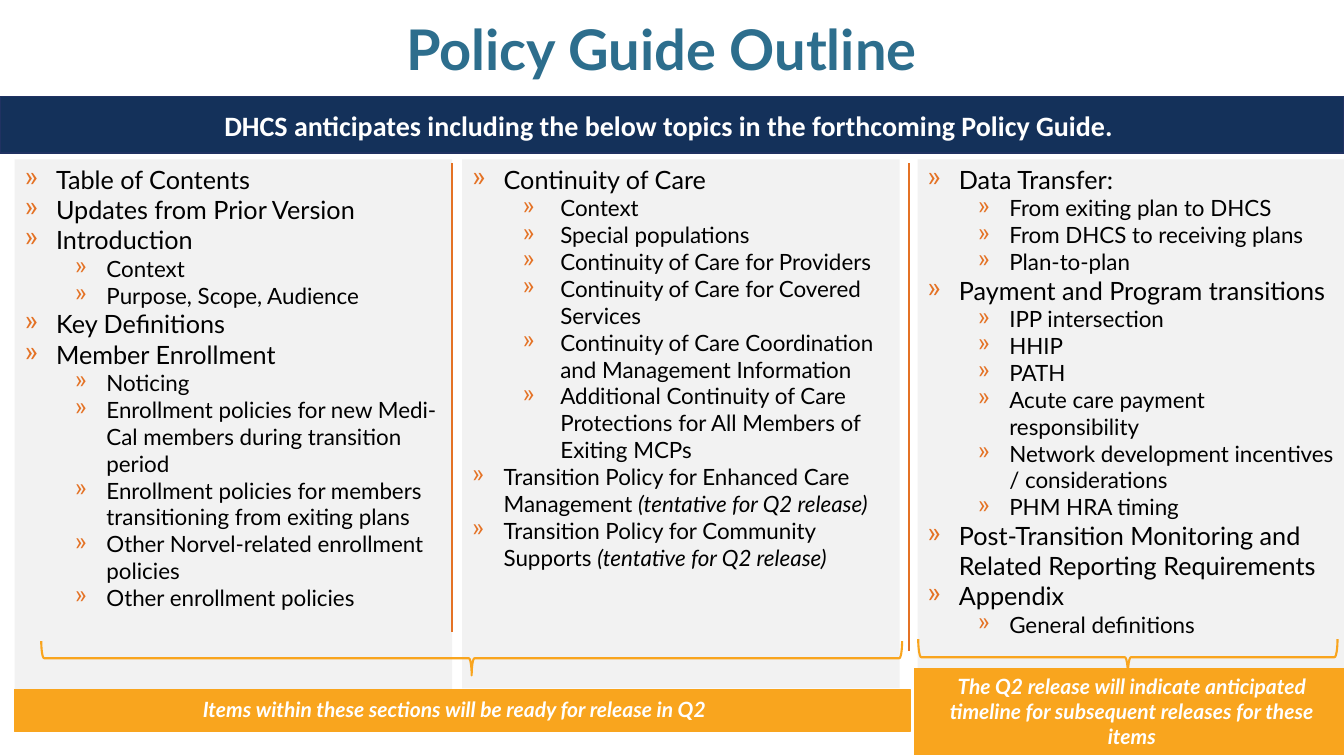
import pptx
import pptx.util
import pptx.dml.color
import pptx.enum.shapes
import pptx.enum.text
import pptx.oxml.ns
import lxml.etree

Pt = pptx.util.Pt
SHAPE = pptx.enum.shapes.MSO_SHAPE
ANCHOR = pptx.enum.text.MSO_ANCHOR
ALIGN = pptx.enum.text.PP_ALIGN

ORANGE = "E47225"
AMBER = "F9A51E"
WHITE = "FFFFFF"
Q2_NOTE = "(tentative for Q2 release)"
TOP_INDENT = 22.5

ENROLLMENT_TOPICS = [
    (0, "Table of Contents"),
    (0, "Updates from Prior Version"),
    (0, "Introduction"),
    (1, "Context"),
    (1, "Purpose, Scope, Audience"),
    (0, "Key Definitions"),
    (0, "Member Enrollment"),
    (1, "Noticing"),
    (1, "Enrollment policies for new Medi-Cal members during transition period"),
    (1, "Enrollment policies for members transitioning from exiting plans"),
    (1, "Other Norvel-related enrollment policies"),
    (1, "Other enrollment policies"),
]
CARE_TOPICS = [
    (0, "Continuity of Care"),
    (1, "Context"),
    (1, "Special populations"),
    (1, "Continuity of Care for Providers"),
    (1, "Continuity of Care for Covered Services"),
    (1, "Continuity of Care Coordination and Management Information"),
    (1, "Additional Continuity of Care Protections for All Members of Exiting MCPs"),
    (0, "Transition Policy for Enhanced Care Management ", Q2_NOTE),
    (0, "Transition Policy for Community Supports ", Q2_NOTE),
]
DATA_TOPICS = [
    (0, "Data Transfer:"),
    (1, "From exiting plan to DHCS"),
    (1, "From DHCS to receiving plans"),
    (1, "Plan-to-plan"),
    (0, "Payment and Program transitions"),
    (1, "IPP intersection"),
    (1, "HHIP"),
    (1, "PATH"),
    (1, "Acute care payment responsibility"),
    (1, "Network development incentives / considerations"),
    (1, "PHM HRA timing"),
    (0, "Post-Transition Monitoring and Related Reporting Requirements"),
    (0, "Appendix"),
    (1, "General definitions"),
]


def rgb(color):
    return pptx.dml.color.RGBColor.from_string(color)


def add_run(p, text, size, color, font="Lato", bold=False, italic=False):
    r = p.add_run()
    r.text = text
    r.font.name = font
    r.font.size = Pt(size)
    r.font.bold = bold
    r.font.italic = italic
    r.font.color.rgb = rgb(color)


def add_shape(s, kind, box, fill=None, line=None, width=1):
    sp = s.shapes.add_shape(kind, *map(Pt, box))
    sp.shadow.inherit = False
    if fill:
        sp.fill.solid()
        sp.fill.fore_color.rgb = rgb(fill)
    else:
        sp.fill.background()
    if line:
        sp.line.color.rgb = rgb(line)
        sp.line.width = Pt(width)
    else:
        sp.line.fill.background()
    return sp


def add_centered_text(sp, text, size, color, anchor, font="Lato", italic=False):
    tf = sp.text_frame
    tf.word_wrap = True
    tf.auto_size = pptx.enum.text.MSO_AUTO_SIZE.NONE
    tf.vertical_anchor = anchor
    p = tf.paragraphs[0]
    p.alignment = ALIGN.CENTER
    add_run(p, text, size, color, font, True, italic)
    return p


def set_bullet(p, left, hanging):
    qn = pptx.oxml.ns.qn
    pPr = p._p.get_or_add_pPr()
    pPr.set("marL", str(Pt(left)))
    pPr.set("indent", str(-Pt(hanging)))
    bu_color = lxml.etree.SubElement(pPr, qn("a:buClr"))
    lxml.etree.SubElement(bu_color, qn("a:srgbClr")).set("val", ORANGE)
    lxml.etree.SubElement(pPr, qn("a:buChar")).set("char", "»")


def add_topics(s, box, topics, sub_hanging=TOP_INDENT):
    sp = add_shape(s, SHAPE.RECTANGLE, box, "F2F2F2")
    tf = sp.text_frame
    tf.word_wrap = True
    tf.vertical_anchor = ANCHOR.TOP
    for i, (level, text, *notes) in enumerate(topics):
        p = tf.add_paragraph() if i else tf.paragraphs[0]
        p.level = level
        p.alignment = ALIGN.LEFT
        hanging = sub_hanging if level else TOP_INDENT
        set_bullet(p, 36 * level + hanging, hanging)
        size = 16 if level or notes else 18
        add_run(p, text, size, "000000")
        for note in notes:
            add_run(p, note, size, "000000", italic=True)


def add_divider(s, x, top, bottom):
    line = s.shapes.add_connector(
        pptx.enum.shapes.MSO_CONNECTOR.STRAIGHT, Pt(x), Pt(top), Pt(x), Pt(bottom))
    line.line.color.rgb = rgb(ORANGE)
    line.line.width = Pt(1.5)
    lxml.etree.SubElement(line._element.spPr, pptx.oxml.ns.qn("a:effectLst"))


def add_brace(s, box):
    sp = add_shape(s, SHAPE.LEFT_BRACE, box, line=AMBER, width=1.5)
    sp.rotation = 270


def main():
    prs = pptx.Presentation()
    prs.slide_width = Pt(960)
    prs.slide_height = Pt(540)
    s = prs.slides.add_slide(prs.slide_layouts[5])

    title = s.shapes.title
    title.left, title.top, title.width, title.height = map(Pt, (18, 0, 918.7, 74.2))
    p = add_centered_text(title, "Policy Guide Outline ", 40, "2D6E8D", ANCHOR.MIDDLE)
    p.line_spacing = 0.9

    banner = add_shape(s, SHAPE.RECTANGLE, (0, 69.1, 960, 40.3), "14315A", "203262")
    add_centered_text(
        banner, "DHCS anticipates including the below topics in the forthcoming Policy Guide. ",
        20, WHITE, ANCHOR.MIDDLE, "Calibri")

    add_topics(s, (10.5, 113.8, 312.5, 388), ENROLLMENT_TOPICS)
    add_topics(s, (330.2, 113.8, 312.5, 378), CARE_TOPICS, 27)
    add_topics(s, (655.4, 113.8, 304.6, 370.8), DATA_TOPICS)
    add_divider(s, 323.2, 116.6, 451.4)
    add_divider(s, 649.6, 116.6, 465)
    add_brace(s, (324.7, 162.7, 24.5, 614.9))
    add_brace(s, (792.7, 319.7, 25.9, 299.5))

    add_shape(s, SHAPE.RECTANGLE, (10.5, 492.5, 639.4, 30.2), AMBER, AMBER)
    label = s.shapes.add_textbox(*map(Pt, (5, 493.9, 639.4, 25.2)))
    add_centered_text(
        label, "Items within these sections will be ready for release in Q2",
        15, WHITE, ANCHOR.TOP, italic=True)
    later = add_shape(s, SHAPE.RECTANGLE, (653, 477.4, 311, 61.9), AMBER, AMBER, 0.75)
    add_centered_text(
        later,
        "The Q2 release will indicate anticipated timeline for subsequent releases for these items",
        15, WHITE, ANCHOR.TOP, italic=True)

    prs.save("out.pptx")


if __name__ == "__main__":
    main()
